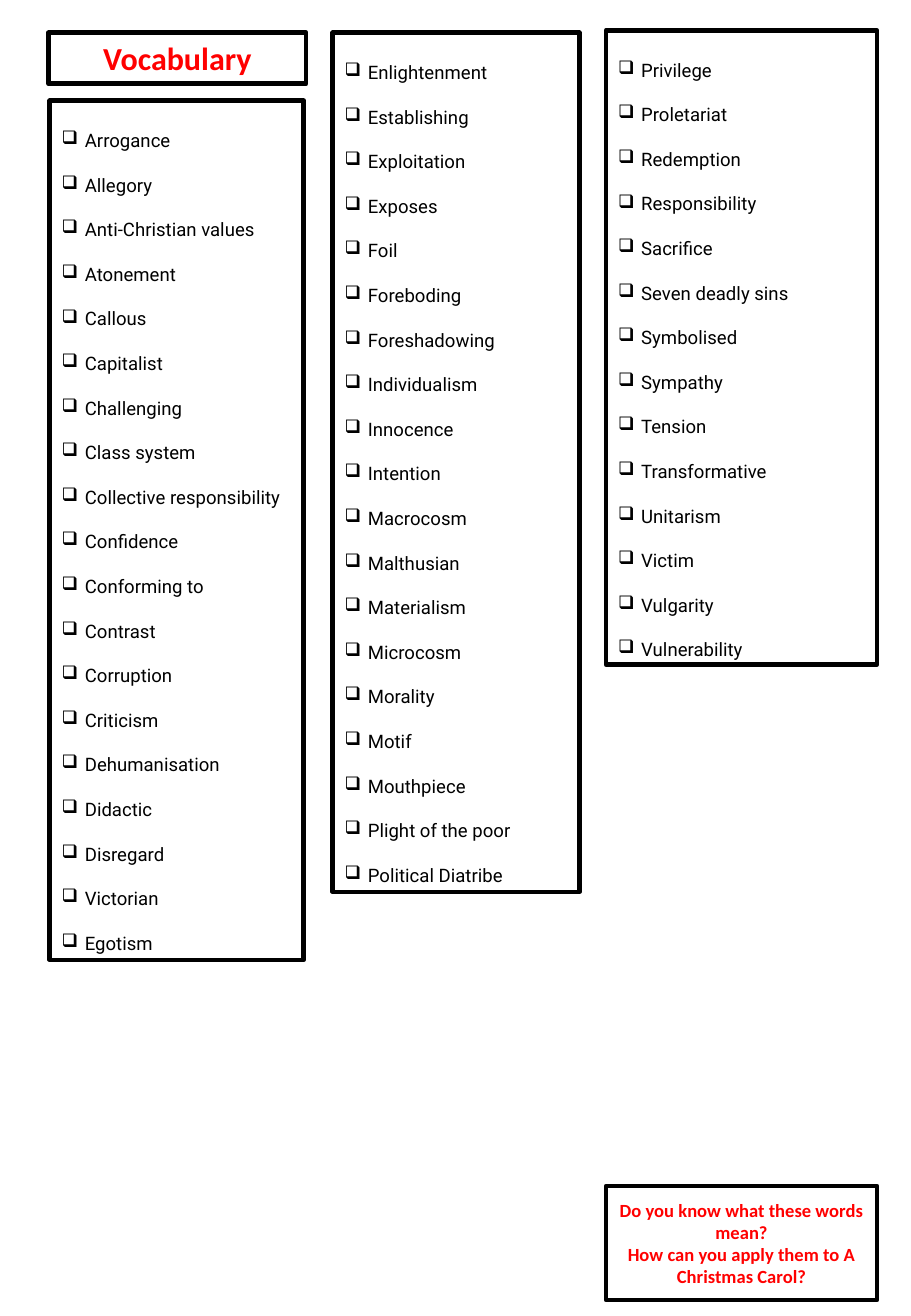
from lxml import etree
from pptx import Presentation
from pptx.dml.color import RGBColor
from pptx.enum.text import MSO_ANCHOR, MSO_AUTO_SIZE, PP_ALIGN
from pptx.oxml.ns import qn
from pptx.util import Inches, Pt

LEFT = PP_ALIGN.LEFT
CENTER = PP_ALIGN.CENTER
JUSTIFY = PP_ALIGN.JUSTIFY
TOP = MSO_ANCHOR.TOP
MIDDLE = MSO_ANCHOR.MIDDLE
GROW = MSO_AUTO_SIZE.SHAPE_TO_FIT_TEXT

BLACK = "000000"
RED = "FF0000"
BULLET = "❑"
INDENT = Inches(0.19)

WORDS_A_TO_E = [
    "Arrogance", "Allegory", "Anti-Christian values", "Atonement", "Callous",
    "Capitalist", "Challenging", "Class system", "Collective responsibility",
    "Confidence", "Conforming to", "Contrast", "Corruption", "Criticism",
    "Dehumanisation", "Didactic", "Disregard", "Victorian", "Egotism",
]
WORDS_E_TO_P = [
    "Enlightenment", "Establishing", "Exploitation", "Exposes", "Foil",
    "Foreboding", "Foreshadowing", "Individualism", "Innocence", "Intention",
    "Macrocosm", "Malthusian", "Materialism", "Microcosm", "Morality", "Motif",
    "Mouthpiece", "Plight of the poor", "Political Diatribe",
]
WORDS_P_TO_V = [
    "Privilege", "Proletariat", "Redemption", "Responsibility", "Sacrifice",
    "Seven deadly sins", "Symbolised", "Sympathy", "Tension", "Transformative",
    "Unitarism", "Victim", "Vulgarity", "Vulnerability",
]
QUESTIONS = [
    "Do you know what these words mean?",
    "How can you apply them to A Christmas Carol?",
]


def color(value):
    return RGBColor.from_string(value)


def add_frame(page, left, top, width, height, anchor=TOP):
    box = page.shapes.add_textbox(
        Inches(left), Inches(top), Inches(width), Inches(height))
    box.line.color.rgb = color(BLACK)
    box.line.width = Pt(2.75)
    outline = box._element.spPr.find(qn("a:ln"))
    etree.SubElement(outline, qn("a:round"))
    frame = box.text_frame
    frame.word_wrap = True
    frame.auto_size = GROW
    frame.vertical_anchor = anchor
    return frame


def write_lines(frame, lines, font, size, ink, alignment, bold=False):
    frame.text = "\n".join(lines)
    for para in frame.paragraphs:
        para.alignment = alignment
        for span in para.runs:
            span.font.name = font
            span.font.size = Pt(size)
            span.font.bold = bold
            span.font.color.rgb = color(ink)


def add_bullet(para):
    properties = para._p.get_or_add_pPr()
    properties.set("marL", str(INDENT))
    properties.set("indent", str(-INDENT))
    etree.SubElement(properties, qn("a:buChar"), char=BULLET)


def add_heading(page, lines, place, size, anchor=TOP):
    frame = add_frame(page, *place, anchor=anchor)
    write_lines(frame, lines, "Calibri", size, RED, CENTER, bold=True)


def add_checklist(page, words, place, alignment):
    frame = add_frame(page, *place)
    write_lines(frame, words, "Roboto", 11, BLACK, alignment)
    for para in frame.paragraphs:
        para.line_spacing = 2.0
        add_bullet(para)


def main():
    deck = Presentation()
    deck.slide_width = Inches(7.5)
    deck.slide_height = Inches(10.83)
    page = deck.slides.add_slide(deck.slide_layouts[6])

    add_heading(page, ["Vocabulary"], (0.4, 0.27, 2.12, 0.42), 19)
    add_checklist(page, WORDS_A_TO_E, (0.41, 0.83, 2.09, 7.07), LEFT)
    add_checklist(page, WORDS_E_TO_P, (2.74, 0.27, 2.03, 7.07), JUSTIFY)
    add_checklist(page, WORDS_P_TO_V, (4.99, 0.25, 2.23, 5.22), JUSTIFY)
    add_heading(page, QUESTIONS, (4.99, 9.76, 2.23, 0.94), 11, MIDDLE)

    deck.save("out.pptx")


if __name__ == "__main__":
    main()
